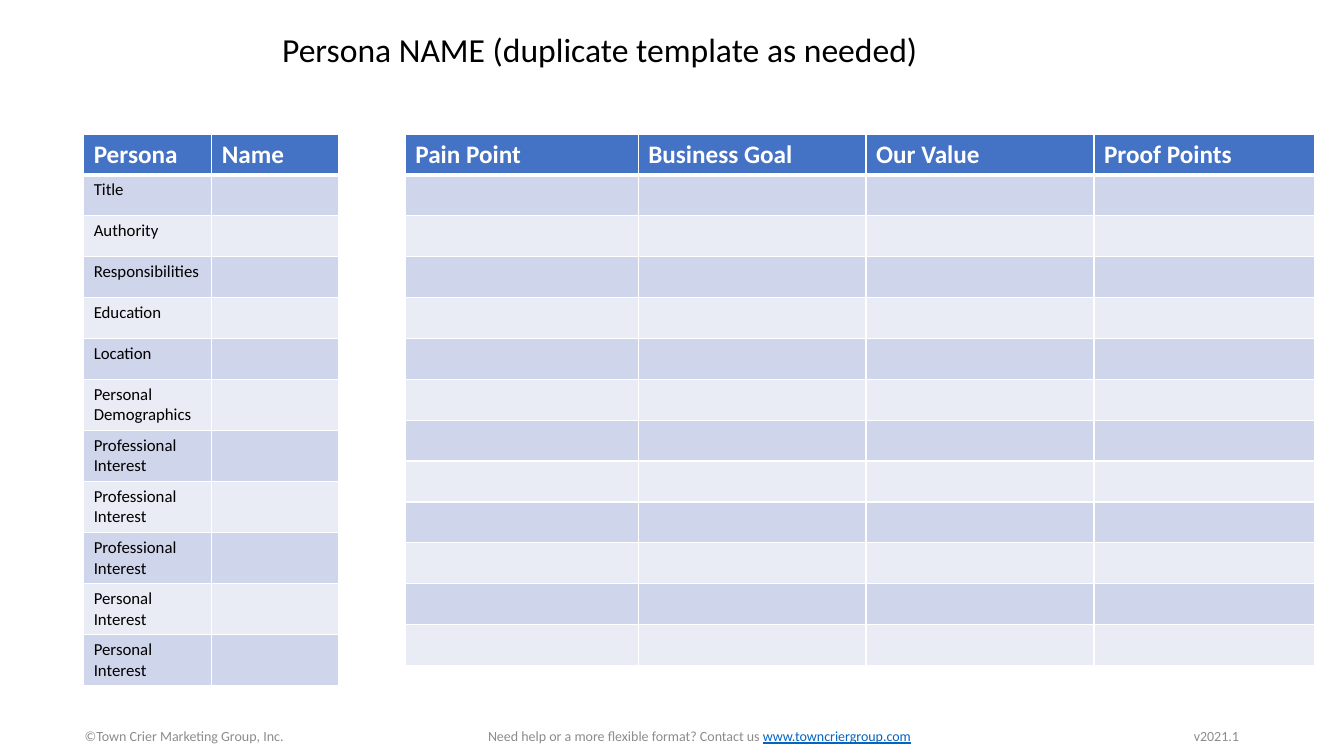
"""Build a persona template slide with two tables and a footer."""
from dataclasses import dataclass

from lxml import etree
from pptx import Presentation
from pptx import util as u
from pptx.dml.color import RGBColor
from pptx.enum import text
from pptx.oxml.ns import qn


@dataclass(frozen=True)
class Theme:
    """Colours, font and type sizes of the slide."""
    font: str = "Calibri"
    ink: str = "000000"
    white: str = "FFFFFF"
    header: str = "4472C4"
    bands: tuple = ("CFD5EA", "E9EBF5")
    muted: str = "8C8C8C"
    link: str = "0563C1"
    title_size: int = 24
    header_size: int = 18
    body_size: int = 12
    footer_size: int = 10
    rule: int = 1
    header_rule: int = 3


THEME = Theme()
TRAITS = ["Title", "Authority", "Responsibilities", "Education", "Location",
          "Personal Demographics", *["Professional Interest"] * 3,
          *["Personal Interest"] * 2]
VALUE_ROWS = 12


def write(paragraph, words, size, color=THEME.ink, bold=False, underline=False):
    """Add a formatted run to a paragraph."""
    run = paragraph.add_run()
    run.text = words
    font = run.font
    font.name, font.size = THEME.font, u.Pt(size)
    font.bold, font.underline = bold, underline
    font.color.rgb = RGBColor.from_string(color)


def add_box(slide, left, top, width, height, anchor=text.MSO_ANCHOR.TOP):
    """Add a wrapping text box and return its text frame."""
    box = slide.shapes.add_textbox(*map(u.Inches, (left, top, width, height)))
    frame = box.text_frame
    frame.word_wrap = True
    frame.vertical_anchor = anchor
    return frame


def add_tabs(paragraph, stops):
    """Set left-aligned tab stops, given in inches."""
    tabs = etree.SubElement(paragraph._p.get_or_add_pPr(), qn("a:tabLst"))
    for stop in stops:
        etree.SubElement(tabs, qn("a:tab"), pos=str(u.Inches(stop)), algn="l")


def add_borders(cell, top, bottom):
    """Draw white cell borders with the given top and bottom weights."""
    properties = cell._tc.get_or_add_tcPr()
    weights = {"L": THEME.rule, "R": THEME.rule, "T": top, "B": bottom}
    for side, weight in weights.items():
        line = etree.SubElement(properties, qn(f"a:ln{side}"), w=str(u.Pt(weight)))
        fill = etree.SubElement(line, qn("a:solidFill"))
        etree.SubElement(fill, qn("a:srgbClr"), val=THEME.white)


def style_cell(cell, row):
    """Give a cell the borders and fill of its row."""
    add_borders(cell,
                THEME.header_rule if row == 1 else THEME.rule,
                THEME.header_rule if row == 0 else THEME.rule)
    cell.fill.solid()
    color = THEME.bands[(row - 1) % 2] if row else THEME.header
    cell.fill.fore_color.rgb = RGBColor.from_string(color)


def add_banded_table(slide, left, widths, row_height, headings, labels):
    """Add a banded table with headings and first-column labels."""
    count = len(labels) + 1
    table = slide.shapes.add_table(
        count, len(widths), u.Inches(left), u.Inches(1.33),
        u.Inches(sum(widths)), u.Inches(row_height * count)).table
    for column, width in zip(table.columns, widths):
        column.width = u.Inches(width)
    for index, row in enumerate(table.rows):
        row.height = u.Inches(row_height)
        for cell in row.cells:
            style_cell(cell, index)
    for column, heading in enumerate(headings):
        write(table.cell(0, column).text_frame.paragraphs[0], heading,
              THEME.header_size, THEME.white, bold=True)
    for index, label in enumerate(labels, 1):
        if label:
            write(table.cell(index, 0).text_frame.paragraphs[0], label, THEME.body_size)


def add_footer(slide):
    """Add the copyright, contact and version line."""
    frame = add_box(slide, 0.24, 7.1, 12.65, 0.4, text.MSO_ANCHOR.MIDDLE)
    frame.margin_left = u.Inches(0.6)
    footer = frame.paragraphs[0]
    add_tabs(footer, (4, 11))
    size = THEME.footer_size
    write(footer, "©Town Crier Marketing Group, Inc.\t"
          "Need help or a more flexible format? Contact us ", size, THEME.muted)
    write(footer, "www.towncriergroup.com", size, THEME.link, underline=True)
    write(footer, "\tv2021.1", size, THEME.muted)


def main():
    """Build and save the slide."""
    deck = Presentation()
    deck.slide_width, deck.slide_height = u.Inches(13.33), u.Inches(7.5)
    slide = deck.slides.add_slide(deck.slide_layouts[6])
    add_banded_table(slide, 4.02, (2.31, 2.26, 2.26, 2.19), 0.39,
                     ("Pain Point", "Business Goal", "Our Value", "Proof Points"),
                     [""] * VALUE_ROWS)
    add_banded_table(slide, 0.83, (1.27, 1.26), 0.4, ("Persona", "Name"), TRAITS)
    add_footer(slide)
    title = add_box(slide, 2.7, 0.24, 6.64, 0.5)
    write(title.paragraphs[0], "Persona NAME (duplicate template as needed)",
          THEME.title_size)
    deck.save("out.pptx")


if __name__ == "__main__":
    main()
